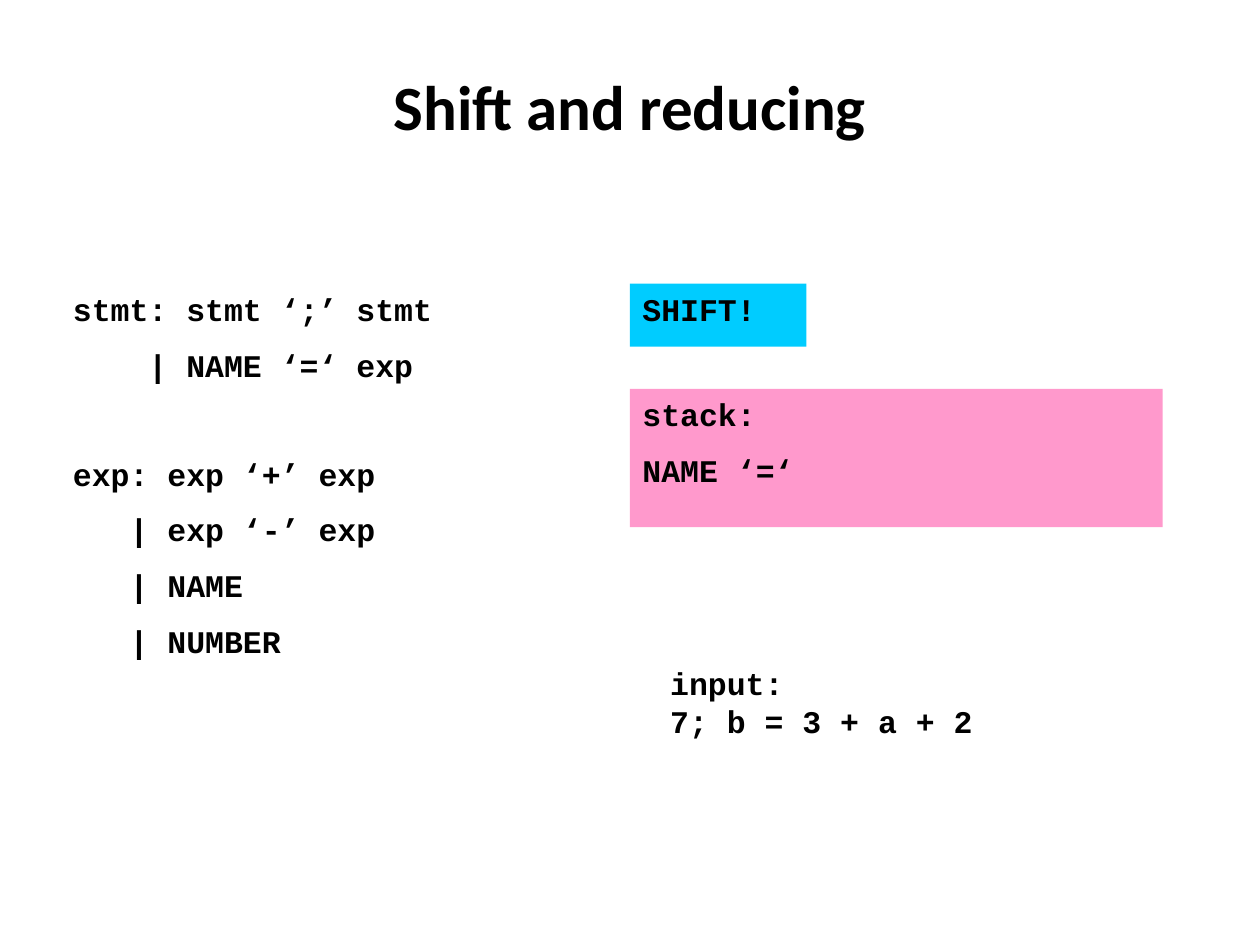
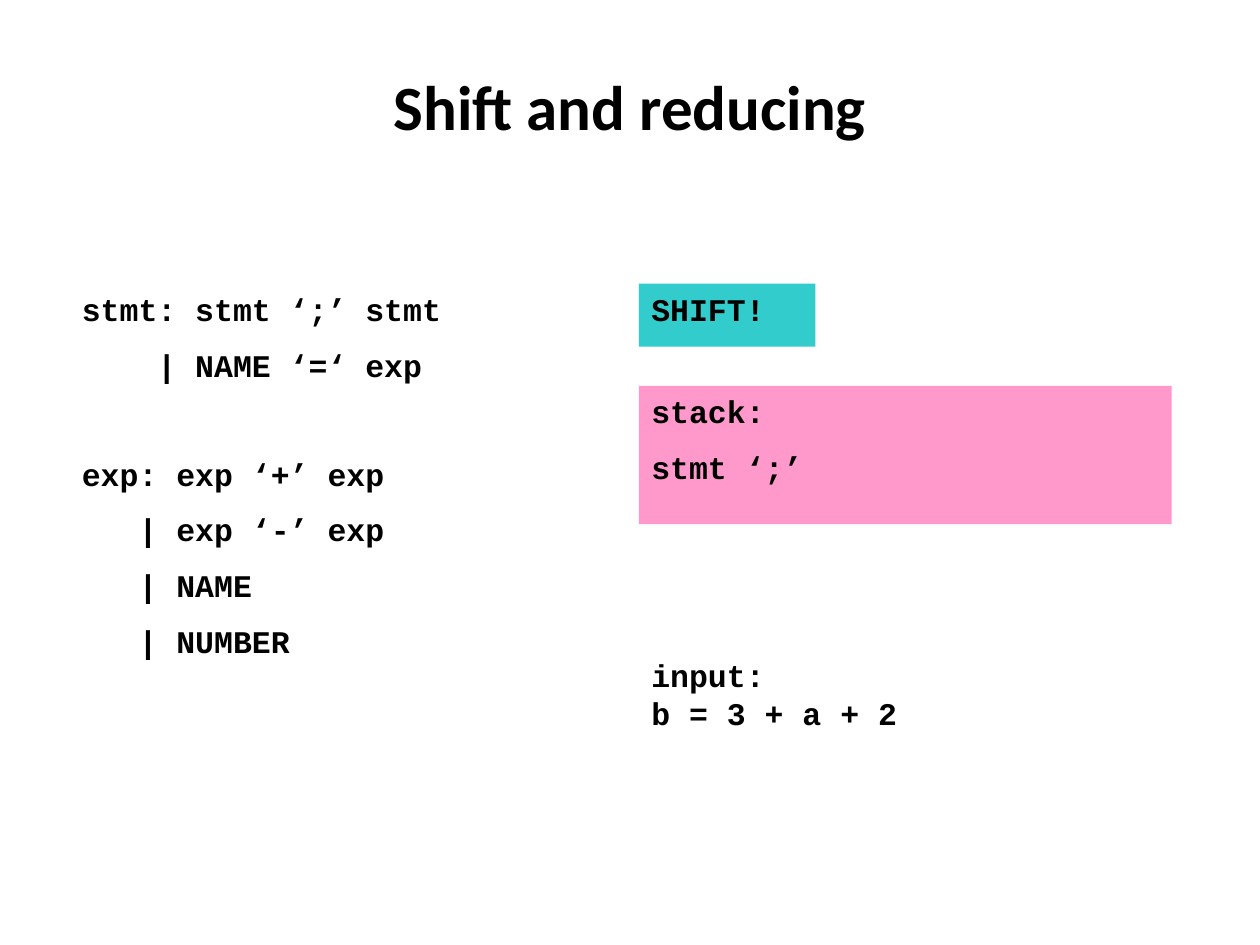
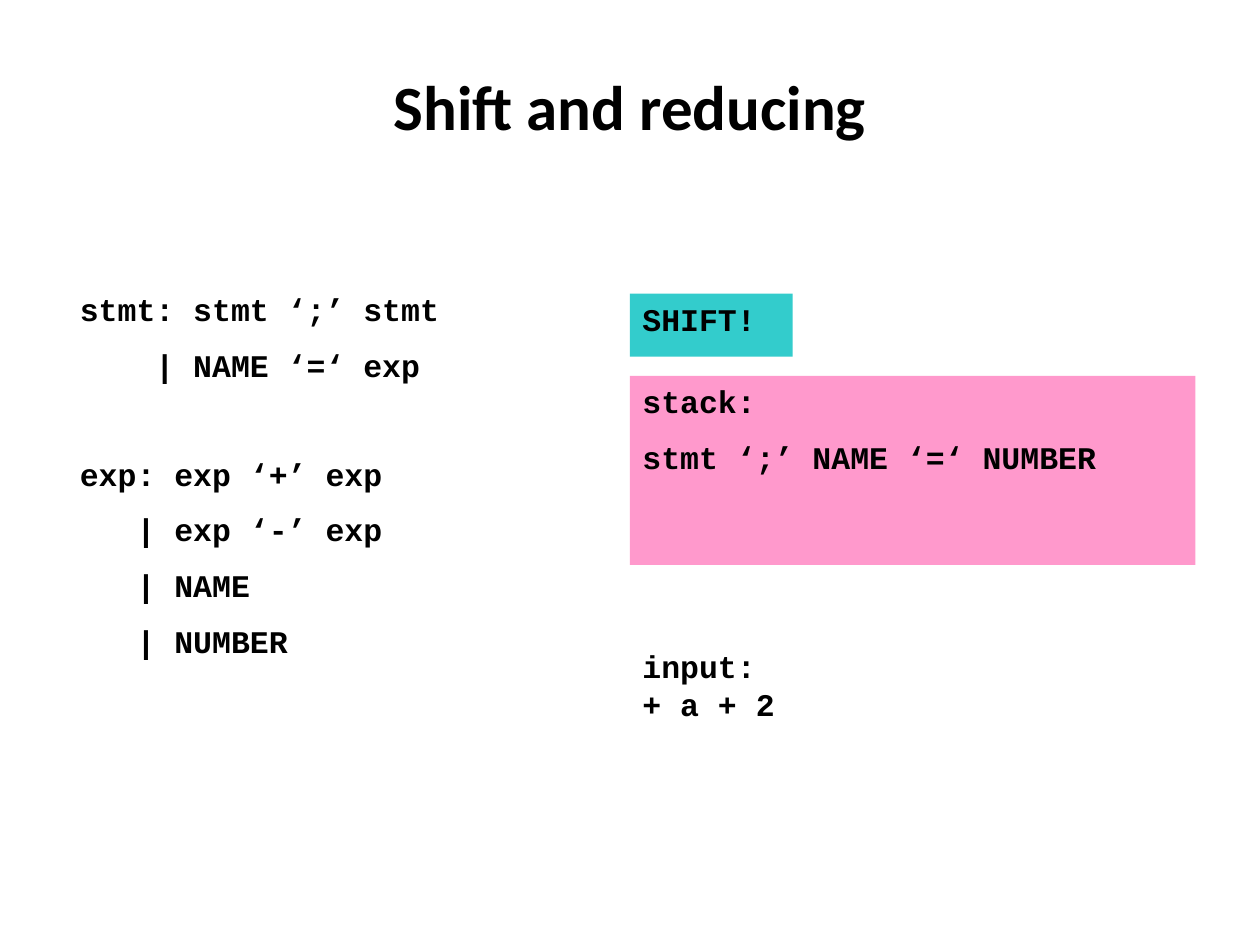
from pptx import Presentation
from pptx.dml.color import RGBColor
from pptx.enum.shapes import MSO_SHAPE
from pptx.enum.text import MSO_ANCHOR, PP_ALIGN
from pptx.util import Cm, Pt

RECTANGLE = MSO_SHAPE.RECTANGLE
TOP, MIDDLE = MSO_ANCHOR.TOP, MSO_ANCHOR.MIDDLE
LEFT, CENTER = PP_ALIGN.LEFT, PP_ALIGN.CENTER

BLACK = RGBColor(0x00, 0x00, 0x00)
PINK = RGBColor(0xFF, 0x99, 0xCC)
CYAN = RGBColor(0x00, 0xCC, 0xFF)
TEAL = RGBColor(0x33, 0xCC, 0xCC)

CODE_FONT, CODE_SIZE = "Courier New", 18
CHARACTER = 0.381  # width of one code character in cm
HALF_LINE = 10.2   # half a line of code in points
NEW_RULE = 4 * HALF_LINE

# Grammar lines: text, indent in characters, space before in points
GRAMMAR = [
    ("stmt: stmt ‘;’ stmt", 0, 0),
    ("| NAME ‘=‘ exp", 4, HALF_LINE),
    ("exp: exp ‘+’ exp", 0, NEW_RULE),
    ("| exp ‘-’ exp", 3, HALF_LINE),
    ("| NAME", 3, HALF_LINE),
    ("| NUMBER", 3, HALF_LINE),
]

# One entry per parser step; boxes are left, top, width, height in cm
STEPS = [
    {"grammar": (1.22, 5.72, 10.36, 10.39),
     "action": (12.7, 5.72, 3.56, 1.27), "action_fill": CYAN,
     "stack": (12.7, 7.84, 10.74, 2.79), "stack_text": "NAME ‘=‘",
     "input": (13.26, 13.26, 7.95, 2.29), "input_text": "7; b = 3 + a + 2"},
    {"grammar": (1.4, 5.72, 10.19, 10.39),
     "action": (12.88, 5.72, 3.56, 1.27), "action_fill": TEAL,
     "stack": (12.88, 7.78, 10.74, 2.79), "stack_text": "stmt ‘;’",
     "input": (12.88, 13.11, 6.55, 2.29), "input_text": "b = 3 + a + 2"},
    {"grammar": (1.36, 5.72, 10.21, 10.39),
     "action": (12.7, 5.92, 3.28, 1.27), "action_fill": TEAL,
     "stack": (12.7, 7.58, 11.4, 3.81), "stack_text": "stmt ‘;’ NAME ‘=‘ NUMBER",
     "input": (12.7, 12.92, 3.76, 2.29), "input_text": "+ a + 2"},
]


def add_box(page, bounds, fill=None, anchor=TOP):
    """Add a text box, or a filled rectangle, and return its text frame."""
    lengths = [Cm(value) for value in bounds]
    if fill is None:
        box = page.shapes.add_textbox(*lengths)
    else:
        box = page.shapes.add_shape(RECTANGLE, *lengths)
        box.shadow.inherit = False
        box.fill.solid()
        box.fill.fore_color.rgb = fill
        box.line.fill.background()
    frame = box.text_frame
    frame.word_wrap = True
    frame.vertical_anchor = anchor
    return frame


def add_lines(frame, lines, font=CODE_FONT, size=CODE_SIZE, align=LEFT):
    """Write (text, indent, space before) lines as bold paragraphs."""
    for number, (text, indent, space) in enumerate(lines):
        para = frame.add_paragraph() if number else frame.paragraphs[0]
        para.alignment = align
        para.space_before = Pt(space)
        if indent:
            properties = para._p.get_or_add_pPr()
            properties.set("marL", str(Cm(indent * CHARACTER)))
            properties.set("indent", "0")
        span = para.add_run()
        span.text = text
        span.font.name = font
        span.font.size = Pt(size)
        span.font.bold = True
        span.font.color.rgb = BLACK


deck = Presentation()
deck.slide_width, deck.slide_height = Cm(25.4), Cm(19.05)
blank_layout = deck.slide_layouts[6]

for step in STEPS:
    page = deck.slides.add_slide(blank_layout)

    # Title
    title = add_box(page, (1.27, 0.76, 22.86, 2.72), anchor=MIDDLE)
    add_lines(title, [("Shift and reducing", 0, 0)], "Calibri", 36, CENTER)

    # Grammar on the left
    add_lines(add_box(page, step["grammar"]), GRAMMAR)

    # Remaining input
    remaining = add_box(page, step["input"])
    add_lines(remaining, [("input:", 0, 0), (step["input_text"], 0, 0)])

    # Stack and parser action
    stack = add_box(page, step["stack"], PINK)
    add_lines(stack, [("stack:", 0, 0), (step["stack_text"], 0, HALF_LINE)])
    action = add_box(page, step["action"], step["action_fill"])
    add_lines(action, [("SHIFT!", 0, 0)])

deck.save("out.pptx")
